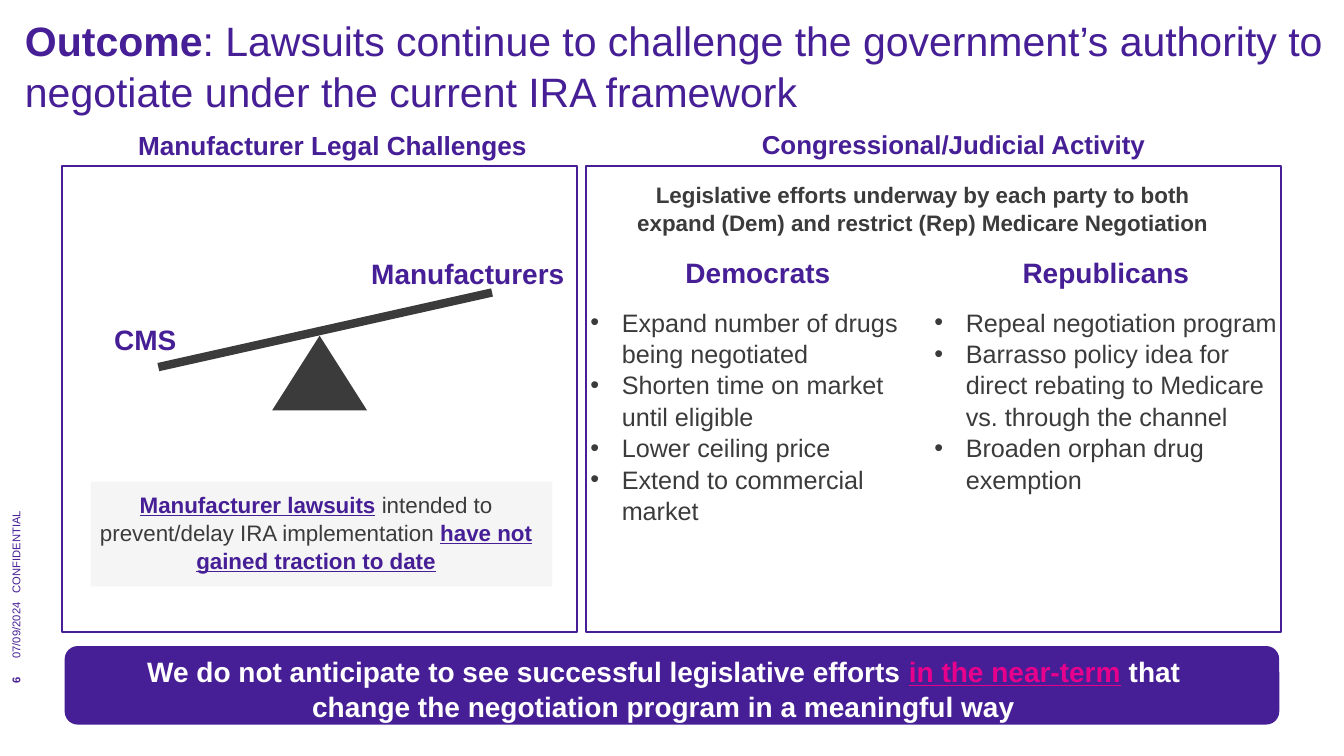
"""Build the slide on lawsuits against the negotiation framework."""
from lxml import etree
from pptx import Presentation
from pptx.dml.color import RGBColor
from pptx.enum import shapes, text
from pptx.oxml import ns
from pptx.util import Cm, Pt

PURPLE = RGBColor(0x46, 0x1E, 0x96)
DARK = RGBColor(0x3B, 0x3B, 0x3B)
PALE = RGBColor(0xF5, 0xF5, 0xF5)
PINK = RGBColor(0xE6, 0x00, 0x8C)
WHITE = RGBColor(0xFF, 0xFF, 0xFF)
LEFT, CENTER = text.PP_ALIGN.LEFT, text.PP_ALIGN.CENTER
LINE_SPACING = 1.04
BULLET_INDENT = Cm(0.79)


def style_paragraph(paragraph, size, color, bold=False, align=LEFT):
    """Set the alignment, spacing and font shared by a paragraph's runs."""
    paragraph.alignment = align
    paragraph.line_spacing = LINE_SPACING
    font = paragraph.font
    font.name, font.size, font.bold = "Arial", Pt(size), bold
    font.color.rgb = color


def add_run(paragraph, words, color=None, bold=None, underline=None):
    """Append a run that overrides only the given properties."""
    run = paragraph.add_run()
    run.text = words
    run.font.bold, run.font.underline = bold, underline
    if color is not None:
        run.font.color.rgb = color


def set_frame(frame, left=0, top=0, right=0):
    """Make a text frame wrap from the top with the given margins."""
    frame.word_wrap = True
    frame.vertical_anchor = text.MSO_ANCHOR.TOP
    frame.margin_left, frame.margin_top = Cm(left), Cm(top)
    frame.margin_right, frame.margin_bottom = Cm(right), Cm(0)


def add_text(slide, box, words, size, color=PURPLE, bold=True, align=CENTER):
    """Add a text box with one styled paragraph and return the box."""
    label = slide.shapes.add_textbox(*map(Cm, box))
    set_frame(label.text_frame)
    paragraph = label.text_frame.paragraphs[0]
    paragraph.text = words
    style_paragraph(paragraph, size, color, bold, align)
    return label


def add_block(slide, kind, box, fill=None, line=None):
    """Add a flat preset shape with an optional fill and outline."""
    block = slide.shapes.add_shape(kind, *map(Cm, box))
    block.shadow.inherit = False
    if fill is None:
        block.fill.background()
    else:
        block.fill.solid()
        block.fill.fore_color.rgb = fill
    if line is None:
        block.line.fill.background()
    else:
        block.line.color.rgb = line
        block.line.width = Pt(1.5)
    return block


def add_title(slide, box):
    """Add the headline with its bold first word."""
    title = add_text(slide, box, "", 29.3, bold=False, align=LEFT)
    paragraph = title.text_frame.paragraphs[0]
    add_run(paragraph, "Outcome", bold=True)
    add_run(paragraph, ": Lawsuits continue to challenge the government’s authority "
                       "to negotiate under the current IRA framework")


def add_side_labels(slide, center):
    """Add the upward-reading page number, date and confidentiality mark."""
    height = 0.4
    labels = (("6", 17.22, 0.66, True), ("07/09/2024", 16.6, 1.6, False),
              ("CONFIDENTIAL", 14.95, 4.6, False))
    for words, bottom, length, bold in labels:
        box = (center - length / 2, bottom - length / 2 - height / 2, length, height)
        add_text(slide, box, words, 8, bold=bold, align=LEFT).rotation = 270


def add_seesaw(slide, left, top):
    """Draw the tilted beam, its pivot and the labels of both sides."""
    beam = slide.shapes.add_connector(
        shapes.MSO_CONNECTOR.STRAIGHT,
        Cm(left + 2.42), Cm(top + 5.06), Cm(left + 10.83), Cm(top + 3.18))
    beam.line.color.rgb, beam.line.width = DARK, Pt(6)
    etree.SubElement(beam._element.spPr, ns.qn("a:effectLst"))
    add_block(slide, shapes.MSO_SHAPE.ISOSCELES_TRIANGLE,
              (left + 5.29, top + 4.27, 2.39, 1.88), DARK)
    add_text(slide, (left + 7.62, top + 2.24, 5.2, 0.89), "Manufacturers", 20)
    add_text(slide, (left + 0.89, top + 3.91, 2.4, 0.89), "CMS", 20)


def add_legal_panel(slide, left, top, width, height):
    """Add the panel on manufacturer lawsuits."""
    note = add_block(slide, shapes.MSO_SHAPE.RECTANGLE,
                     (left + 0.72, top + 7.95, 11.63, 2.64), PALE)
    set_frame(note.text_frame, top=0.2, right=0.28)
    paragraph = note.text_frame.paragraphs[0]
    style_paragraph(paragraph, 16, DARK, align=CENTER)
    add_run(paragraph, "Manufacturer lawsuits", PURPLE, True, True)
    add_run(paragraph, " intended to prevent/delay IRA implementation ")
    add_run(paragraph, "have not gained traction to date", PURPLE, True, True)
    add_block(slide, shapes.MSO_SHAPE.RECTANGLE, (left, top, width, height), line=PURPLE)
    add_text(slide, (left + 1.91, top - 0.97, 10.29, 0.9),
             "Manufacturer Legal Challenges", 18.7, align=LEFT)
    add_seesaw(slide, left, top)


def add_party(slide, box, party, goals):
    """Add a party's name above its bulleted goals."""
    frame = add_text(slide, box, party, 20).text_frame
    for index, goal in enumerate(goals):
        paragraph = frame.add_paragraph()
        paragraph.text = goal
        properties = paragraph._p.get_or_add_pPr()
        properties.set("marL", str(BULLET_INDENT))
        properties.set("indent", str(-BULLET_INDENT))
        etree.SubElement(properties, ns.qn("a:buFont"), typeface="Arial")
        etree.SubElement(properties, ns.qn("a:buChar"), char="•")
        style_paragraph(paragraph, 18, DARK)
        if index == 0:
            paragraph.space_before = Pt(12)


def add_congress_panel(slide, left, top, width, height):
    """Add the panel comparing both parties' efforts."""
    add_block(slide, shapes.MSO_SHAPE.RECTANGLE, (left, top, width, height), line=PURPLE)
    add_text(slide, (left + 4.42, top - 0.97, 9.96, 0.9),
             "Congressional/Judicial Activity", 18.5, align=LEFT)
    add_text(slide, (left + 1.02, top + 0.36, 14.91, 1.4),
             "Legislative efforts underway by each party to both expand (Dem) "
             "and restrict (Rep) Medicare Negotiation", 16, DARK)
    parties = (
        ("Democrats ", ("Expand number of drugs being\u00a0negotiated".replace("\u00a0", " "),
                        "Shorten time on market until eligible",
                        "Lower ceiling price", "Extend to commercial market")),
        ("Republicans", ("Repeal negotiation program",
                         "Barrasso policy idea for direct rebating to Medicare "
                         "vs. through the channel",
                         "Broaden orphan drug exemption")),
    )
    for column, (party, goals) in enumerate(parties):
        add_party(slide, (left + 0.1 + column * 8.67, top + 2.21, 8.64, 6.5), party, goals)


def add_banner(slide, box):
    """Add the rounded conclusion bar."""
    banner = add_block(slide, shapes.MSO_SHAPE.ROUNDED_RECTANGLE, box, PURPLE)
    set_frame(banner.text_frame, left=0.68, top=0.08, right=1.1)
    paragraph = banner.text_frame.paragraphs[0]
    style_paragraph(paragraph, 20, WHITE, True, CENTER)
    add_run(paragraph, "We do not anticipate to see successful legislative efforts ")
    add_run(paragraph, "in the near-term", PINK, underline=True)
    add_run(paragraph, " that change the negotiation program in a meaningful way")


def main():
    """Assemble and save the slide."""
    presentation = Presentation()
    presentation.slide_width, presentation.slide_height = Cm(33.87), Cm(19.05)
    slide = presentation.slides.add_slide(presentation.slide_layouts[6])
    add_title(slide, (0.63, 0.33, 32.87, 2.44))
    add_side_labels(slide, 0.42)
    add_legal_panel(slide, 1.57, 4.19, 12.98, 11.73)
    add_congress_panel(slide, 14.78, 4.19, 17.5, 11.73)
    add_banner(slide, (1.63, 16.28, 30.61, 1.98))
    presentation.save("out.pptx")


if __name__ == "__main__":
    main()
